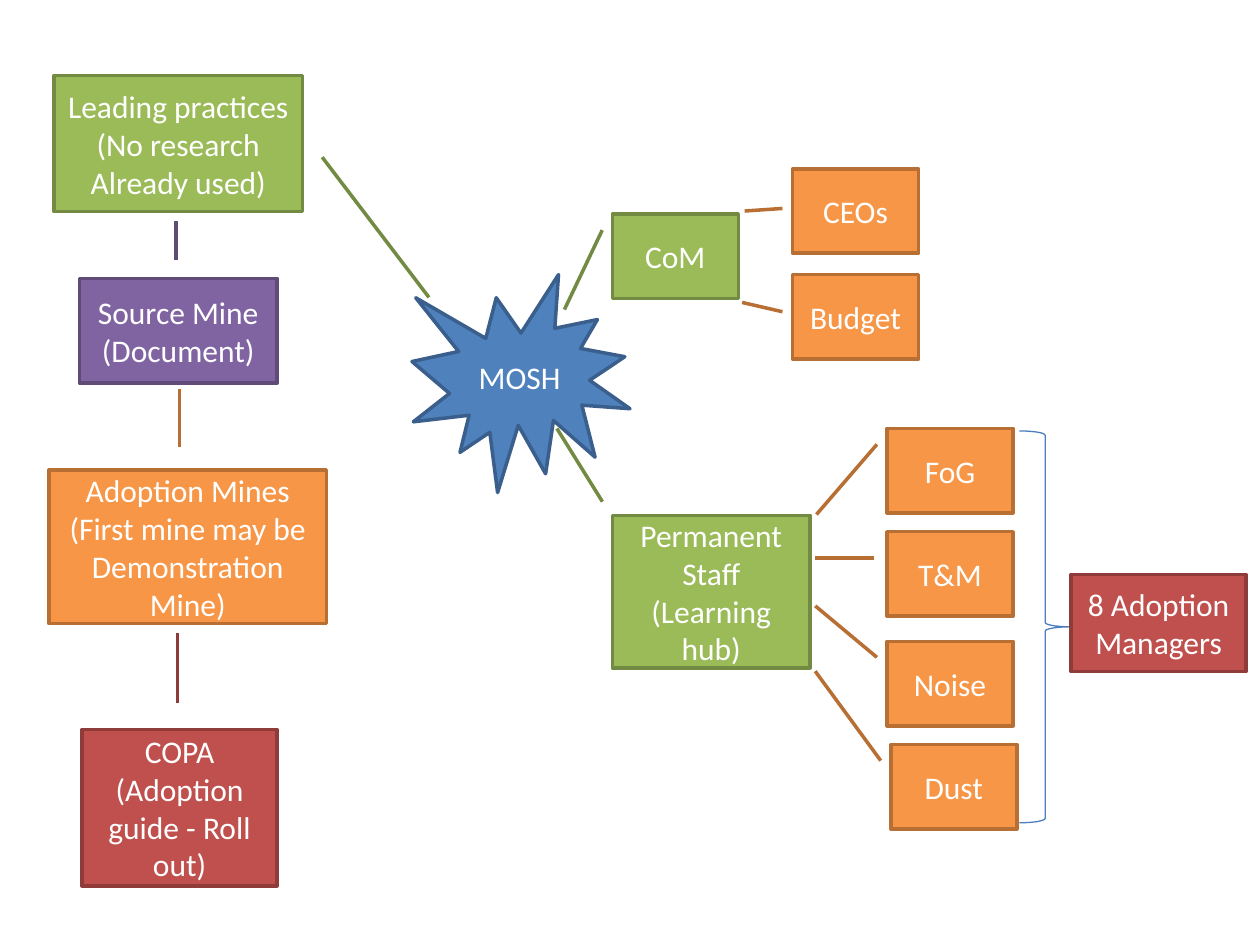
from pptx import Presentation
from pptx.dml.color import RGBColor
from pptx.enum import shapes, text
from pptx.util import Inches, Pt

FONT = "Calibri"
WHITE = "FFFFFF"
BLUE = ("4F81BD", "3A5F8C")
GREEN = ("9BBB59", "738A42")
ORANGE = ("F79646", "B76F34")
PURPLE = ("8064A2", "5F4A78")
RED = ("C0504D", "8E3B39")
BRACE_COLOR = "4B7EBC"

SHAPE = shapes.MSO_SHAPE
CALLOUT = SHAPE.LINE_CALLOUT_1
SMALL = (1, 0.67)


def rgb(value):
    return RGBColor.from_string(value)


def add_node(slide, kind, box, colors, lines, pointer=()):
    """Add a filled, labelled shape; pointer is the callout line as y1, x1, y2, x2 fractions."""
    shape = slide.shapes.add_shape(kind, *map(Inches, box))
    shape.shadow.inherit = False
    fill, outline = colors
    shape.fill.solid()
    shape.fill.fore_color.rgb = rgb(fill)
    shape.line.color.rgb = rgb(outline)
    shape.line.width = Pt(2)
    for index, value in enumerate(pointer):
        shape.adjustments[index] = value
    frame = shape.text_frame
    frame.word_wrap = True
    frame.vertical_anchor = text.MSO_ANCHOR.MIDDLE
    paragraph = frame.paragraphs[0]
    paragraph.alignment = text.PP_ALIGN.CENTER
    paragraph.font.size = Pt(18)
    for index, line in enumerate(lines):
        if index:
            paragraph.add_line_break()
        run = paragraph.add_run()
        run.text = line
        run.font.name = FONT
        run.font.size = Pt(18)
        run.font.color.rgb = rgb(WHITE)


def add_practice_chain(slide, left, top):
    steps = [
        (0.04, 0, 1.97, 1.08, GREEN, ["Leading practices (No research Already used)"],
         (0.6, 1.08, 1.63, 1.51)),
        (0.24, 1.61, 1.57, 0.83, PURPLE, ["Source Mine (Document)"],
         (-0.18, 0.49, -0.55, 0.49)),
        (0, 3.13, 2.2, 1.22, ORANGE, ["Adoption Mines (First mine may be Demonstration Mine)"],
         (-0.15, 0.47, -0.53, 0.47)),
        (0.26, 5.19, 1.55, 1.24, RED, ["COPA", "(Adoption guide - Roll out)"],
         (-0.17, 0.49, -0.62, 0.49)),
    ]
    for x, y, width, height, colors, lines, pointer in steps:
        add_node(slide, CALLOUT, (left + x, top + y, width, height), colors, lines, pointer)


def add_council_branch(slide, left, top):
    add_node(slide, CALLOUT, (left, top + 0.36, *SMALL), GREEN, ["CoM"],
             (0.19, -0.08, 1.13, -0.38))
    members = [
        (0, "CEOs", (0.47, -0.08, 0.5, -0.38)),
        (0.84, "Budget", (0.44, -0.08, 0.33, -0.4)),
    ]
    for y, label, pointer in members:
        add_node(slide, CALLOUT, (left + 1.43, top + y, *SMALL), ORANGE, [label], pointer)


def add_staff_branch(slide, left, top):
    add_node(slide, CALLOUT, (left, top + 0.69, 1.57, 1.21), GREEN,
             ["Permanent Staff (Learning hub)"], (-0.09, -0.05, -0.57, -0.28))
    teams = [
        (2.18, 0, "FoG", (0.19, -0.08, 1.02, -0.56)),
        (2.18, 0.82, "T&M", (0.31, -0.1, 0.31, -0.57)),
        (2.18, 1.69, "Noise", (0.19, -0.08, -0.42, -0.57)),
        (2.21, 2.51, "Dust", (0.19, -0.08, -0.87, -0.6)),
    ]
    for x, y, label, pointer in teams:
        add_node(slide, CALLOUT, (left + x, top + y, *SMALL), ORANGE, [label], pointer)

    brace = slide.shapes.add_shape(SHAPE.RIGHT_BRACE, Inches(left + 3.23), Inches(top + 0.02),
                                   Inches(0.41), Inches(3.11))
    brace.shadow.inherit = False
    brace.fill.background()
    brace.line.color.rgb = rgb(BRACE_COLOR)
    brace.line.width = Pt(0.75)
    add_node(slide, SHAPE.RECTANGLE, (left + 3.64, top + 1.16, 1.39, 0.77), RED,
             ["8 Adoption Managers"])


def main():
    presentation = Presentation()
    presentation.slide_width = Inches(10)
    presentation.slide_height = Inches(7.5)
    slide = presentation.slides.add_slide(presentation.slide_layouts[6])

    add_node(slide, SHAPE.EXPLOSION1, (3.27, 2.18, 1.73, 1.73), BLUE, ["MOSH"])
    add_council_branch(slide, 4.86, 1.34)
    add_staff_branch(slide, 4.86, 3.4)
    add_practice_chain(slide, 0.39, 0.6)

    presentation.save("out.pptx")


if __name__ == "__main__":
    main()
